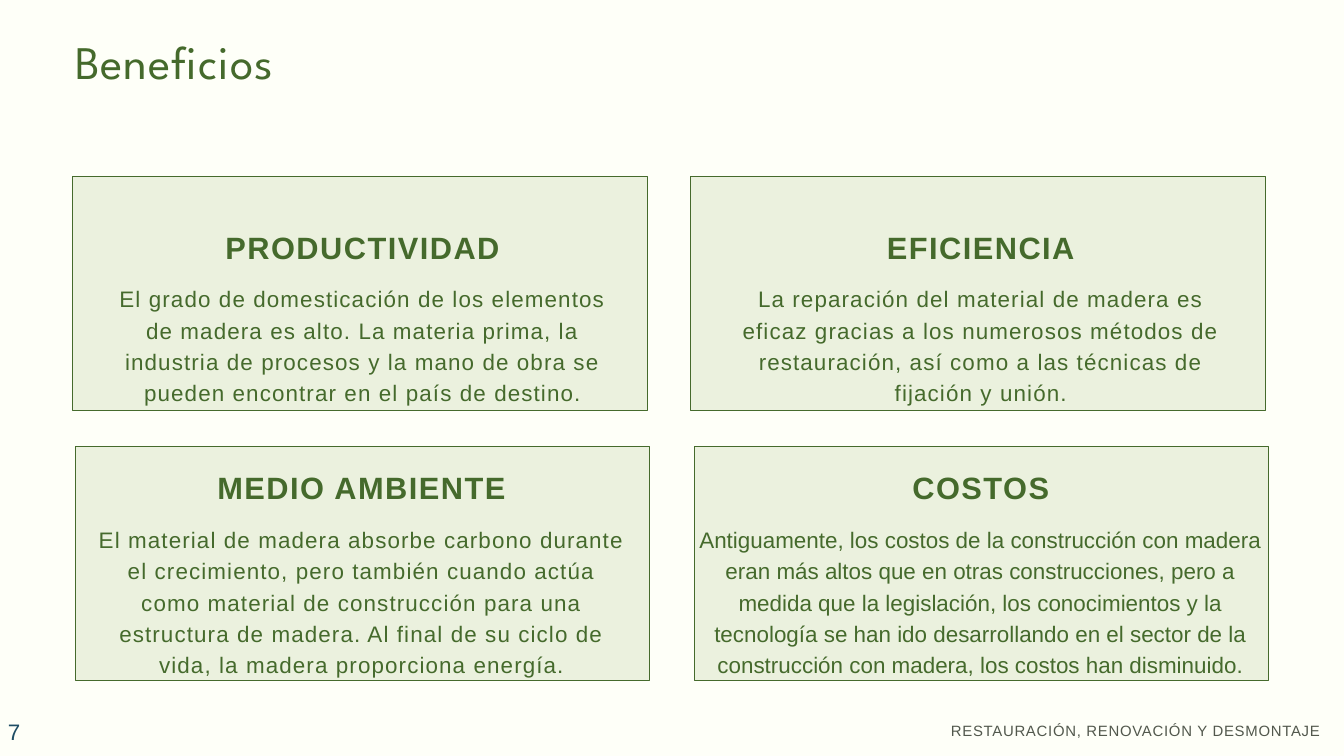
from pptx import Presentation
from pptx.dml.color import RGBColor
from pptx.enum.shapes import MSO_SHAPE as Shape
from pptx.enum.text import MSO_ANCHOR as Anchor, MSO_AUTO_SIZE as AutoSize, PP_ALIGN as Align
from pptx.util import Inches, Pt

GREEN, PALE, CREAM, GREY, BLUE = "456A2C", "EBF1DE", "FEFFF8", "52584D", "1E4D65"


def color(hex_code):
    return RGBColor.from_string(hex_code)


class Deck:
    font = "Arial"

    def __init__(self, width, height):
        self.prs = Presentation()
        self.prs.slide_width, self.prs.slide_height = Inches(width), Inches(height)
        self.slide = self.prs.slides.add_slide(self.prs.slide_layouts[5])
        self.slide.background.fill.solid()
        self.slide.background.fill.fore_color.rgb = color(CREAM)

    def set_text(self, shape, text, size, align=Align.CENTER, leading=None, spacing=0,
                 bold=False, hue=GREEN, font=None, inset=0, anchor=Anchor.TOP):
        frame = shape.text_frame
        frame.text = text
        frame.word_wrap, frame.auto_size = True, AutoSize.NONE
        frame.vertical_anchor = anchor
        frame.margin_left = frame.margin_right = Inches(inset)
        frame.margin_top = frame.margin_bottom = Inches(inset / 2)
        paragraph = frame.paragraphs[0]
        paragraph.alignment = align
        if leading:
            paragraph.line_spacing = Pt(leading)
        run = paragraph.runs[0]
        run.font.name, run.font.size, run.font.bold = font or self.font, Pt(size), bold
        run.font.color.rgb = color(hue)
        # Letter spacing, in hundredths of a point
        run.font._element.set("spc", str(round(spacing * 100)))

    def title(self, text, left, top, width, height, **style):
        heading = self.slide.shapes.title
        heading.left, heading.top = Inches(left), Inches(top)
        heading.width, heading.height = Inches(width), Inches(height)
        self.set_text(heading, text, **style)

    def text(self, text, left, top, width, height, **style):
        box = self.slide.shapes.add_textbox(*map(Inches, (left, top, width, height)))
        self.set_text(box, text, **style)

    def panel(self, left, top, width, height):
        panel = self.slide.shapes.add_shape(
            Shape.RECTANGLE, *map(Inches, (left, top, width, height)))
        panel.shadow.inherit = False
        panel.fill.solid()
        panel.fill.fore_color.rgb = color(PALE)
        panel.line.color.rgb = color(GREEN)
        panel.line.width = Pt(0.75)

    def card(self, left, top, heading, body, drop, head_column, body_column, spacing=1.2):
        """Panel with a heading `drop` below its top; columns are (left, width)."""
        self.panel(left, top, 8.55, 3.48)
        (head_left, head_width), (body_left, body_width) = head_column, body_column
        self.text(heading, head_left, top + drop, head_width, 0.56,
                  size=33, leading=41.2, spacing=1.6, bold=True)
        self.text(body, body_left, top + drop + 0.8, body_width, 2.35,
                  size=24, leading=33.6, spacing=spacing)


def main():
    deck = Deck(20, 11.25)

    # Title
    deck.title("Beneficios", 1.12, 0.39, 17.71, 0.94, size=50, align=Align.LEFT,
               leading=66.8, spacing=1, font="League Spartan")

    # Four benefits
    wide, left_column, right_column = (1.42, 7.92), (1.7, 7.39), (10.9, 7.39)
    deck.card(1.08, 2.62, "PRODUCTIVIDAD",
              "El grado de domesticación de los elementos de madera es alto. La materia "
              "prima, la industria de procesos y la mano de obra se pueden encontrar en "
              "el país de destino.", 0.76, left_column, left_column)
    deck.card(10.28, 2.62, "EFICIENCIA",
              "La reparación del material de madera es eficaz gracias a los numerosos "
              "métodos de restauración, así como a las técnicas de fijación y unión.",
              0.76, right_column, right_column)
    deck.card(1.12, 6.64, "MEDIO AMBIENTE",
              "El material de madera absorbe carbono durante el crecimiento, pero también "
              "cuando actúa como material de construcción para una estructura de madera. "
              "Al final de su ciclo de vida, la madera proporciona energía.",
              0.32, wide, wide)
    deck.card(10.33, 6.64, "COSTOS",
              "Antiguamente, los costos de la construcción con madera eran más altos que "
              "en otras construcciones, pero a medida que la legislación, los "
              "conocimientos y la tecnología se han ido desarrollando en el sector de la "
              "construcción con madera, los costos han disminuido.",
              0.32, right_column, (10.33, 8.51), spacing=0)

    # Footer and page number
    deck.text("RESTAURACIÓN, RENOVACIÓN Y DESMONTAJE", 11.33, 10.7, 8.32, 0.29,
              size=16, align=Align.RIGHT, leading=22.4, spacing=0.8, hue=GREY)
    deck.text("7", 0.02, 10.69, 2.33, 0.4, size=24, align=Align.LEFT, spacing=1.2,
              hue=BLUE, inset=0.1, anchor=Anchor.MIDDLE)

    deck.prs.save("out.pptx")


if __name__ == "__main__":
    main()
